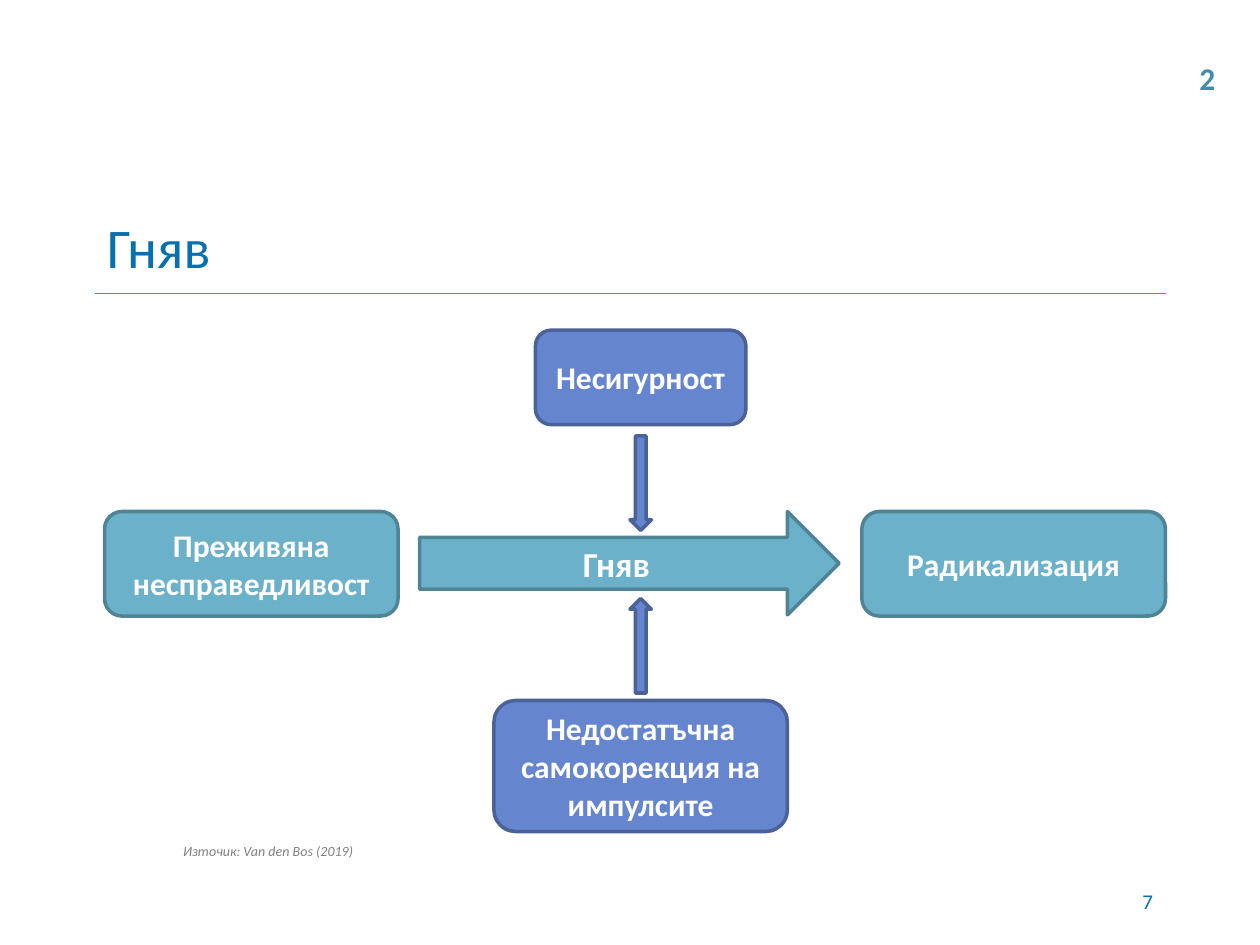
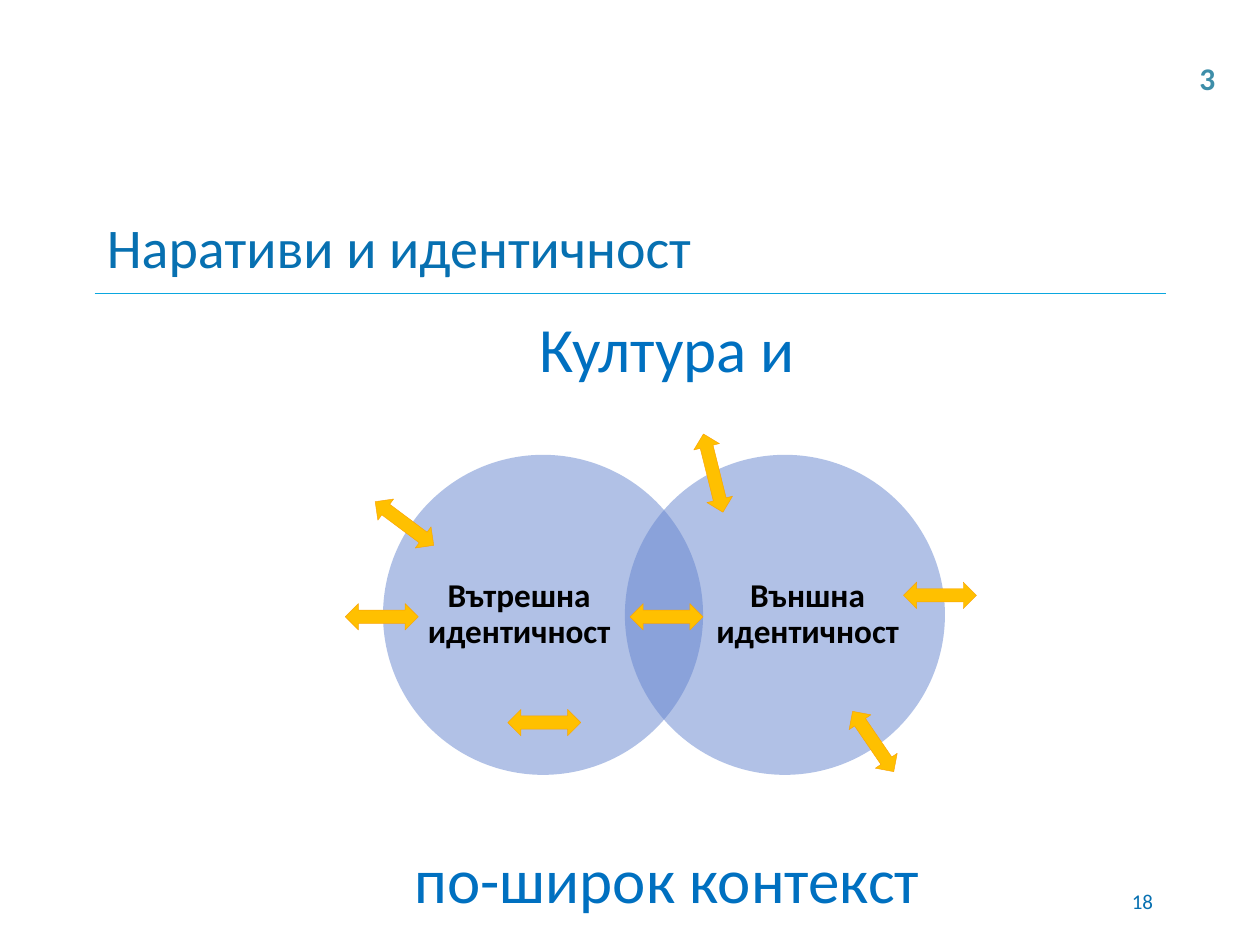
from lxml import etree
from pptx import Presentation
from pptx.dml.color import RGBColor
from pptx.enum.shapes import MSO_CONNECTOR, MSO_SHAPE
from pptx.enum.text import MSO_ANCHOR, PP_ALIGN
from pptx.oxml.ns import qn
from pptx.util import Inches, Pt

COLOURS = {
    "title": "0770B1", "rule": "0BA7DF", "corner": "3E8EA9",
    "teal": "6BB1C9", "teal_edge": "4F8395",
    "violet": "6585CF", "violet_edge": "4B6299",
    "gold": "FFC000", "gold_edge": "F9A307",
    "context": "0070C0", "source": "808080",
    "white": "FFFFFF", "black": "000000",
}
FONT = "Calibri"


def colour(name):
    return RGBColor.from_string(COLOURS[name])


def write(shape, text, size, ink, bold=False, italic=False, align=PP_ALIGN.CENTER,
          anchor=MSO_ANCHOR.MIDDLE, wrap=True, inset=None, spacing=None):
    frame = shape.text_frame
    frame.word_wrap = wrap
    frame.vertical_anchor = anchor
    if inset is not None:
        frame.margin_left = frame.margin_right = Inches(inset)
        frame.margin_top = frame.margin_bottom = Inches(inset)
    para = frame.paragraphs[0]
    para.alignment = align
    if spacing:
        para.line_spacing = spacing
    span = para.add_run()
    span.text = text
    span.font.name = FONT
    span.font.size = Pt(size)
    span.font.bold = bold
    span.font.italic = italic
    span.font.color.rgb = colour(ink)


class SlideBuilder:
    def __init__(self, deck):
        self.deck = deck
        self.page = None

    def start(self, title, corner, number):
        """Add a page with its title, rule and both numbers."""
        self.page = self.deck.slides.add_slide(self.deck.slide_layouts[6])
        self.rule(0.75, 9.25, 2.33)
        self.text((0.75, 1.58, 8.5, 0.75), title, size=32, ink="title",
                  align=PP_ALIGN.LEFT)
        self.text((9.42, 0.42, 0.33, 0.4), corner, size=18, ink="corner", bold=True,
                  align=PP_ALIGN.LEFT, anchor=MSO_ANCHOR.TOP, wrap=False)
        self.text((7.17, 6.95, 2.08, 0.4), number, size=12, ink="title",
                  align=PP_ALIGN.RIGHT)

    def rule(self, left, right, top):
        line = self.page.shapes.add_connector(
            MSO_CONNECTOR.STRAIGHT, Inches(left), Inches(top), Inches(right), Inches(top))
        line.line.color.rgb = colour("rule")
        line.line.width = Pt(0.75)
        etree.SubElement(line._element.spPr, qn("a:effectLst"))

    def text(self, place, text, **style):
        box = self.page.shapes.add_textbox(*map(Inches, place))
        write(box, text, **style)

    def shape(self, kind, place, fill, edge=None, width=2, rotation=0, opacity=None):
        shape = self.page.shapes.add_shape(kind, *map(Inches, place))
        shape.shadow.inherit = False
        shape.rotation = rotation
        shape.fill.solid()
        shape.fill.fore_color.rgb = colour(fill)
        if opacity:
            tint = shape._element.spPr.find(qn("a:solidFill"))[0]
            etree.SubElement(tint, qn("a:alpha"), val=str(opacity * 1000))
        if edge:
            shape.line.color.rgb = colour(edge)
            shape.line.width = Pt(width)
        else:
            shape.line.fill.background()
        return shape

    def labelled(self, kind, place, tone, text, size=18):
        shape = self.shape(kind, place, tone, f"{tone}_edge")
        write(shape, text, size=size, ink="white", bold=True)


def anger_slide(builder):
    builder.start("Гняв", "2", "7")
    rounded = MSO_SHAPE.ROUNDED_RECTANGLE
    builder.labelled(rounded, (0.83, 4.06, 2.33, 0.83), "teal", "Преживяна несправедливост")
    builder.labelled(rounded, (6.84, 4.06, 2.41, 0.83), "teal", "Радикализация")
    builder.labelled(MSO_SHAPE.RIGHT_ARROW, (3.33, 4.06, 3.33, 0.82), "teal", "Гняв", size=20)
    for top, rotation in ((3.75, 90), (5.04, 270)):
        builder.shape(MSO_SHAPE.RIGHT_ARROW, (4.71, top, 0.75, 0.17),
                      "violet", "violet_edge", rotation=rotation)
    builder.labelled(rounded, (3.92, 5.56, 2.33, 1.04), "violet",
                     "Недостатъчна самокорекция на импулсите")
    builder.labelled(rounded, (4.25, 2.62, 1.67, 0.75), "violet", "Несигурност")
    builder.text((0.75, 6.64, 2.76, 0.24), "Източик: Van den Bos (2019)", size=8,
                 ink="source", italic=True, anchor=MSO_ANCHOR.TOP)


def identity_slide(builder):
    builder.start("Наративи и идентичност", "3", "18")
    for top, text in ((2.41, "Култура и"), (6.62, "по-широк контекст")):
        builder.text((0.67, top, 9.25, 0.71), text, size=36, ink="context",
                     anchor=MSO_ANCHOR.TOP)

    circles = ((3.04, 3.39, "Вътрешна идентичност"), (4.96, 5.68, "Външна идентичност"))
    for circle_left, label_left, text in circles:
        builder.shape(MSO_SHAPE.OVAL, (circle_left, 3.61, 2.54, 2.54), "violet", opacity=50)
        builder.text((label_left, 3.91, 1.46, 1.94), text, size=19, ink="black",
                     bold=True, inset=0, spacing=0.9)

    exchanges = (
        (5, 4.79, 0.58, 0), (6.64, 5.78, 0.58, 55.7), (7.17, 4.62, 0.58, 0),
        (5.34, 3.65, 0.64, 76), (4.03, 5.63, 0.58, 0), (2.74, 4.79, 0.58, 0),
        (2.92, 4.05, 0.58, 36.7),
    )
    for left, top, length, rotation in exchanges:
        builder.shape(MSO_SHAPE.LEFT_RIGHT_ARROW, (left, top, length, 0.21),
                      "gold", "gold_edge", width=0.25, rotation=rotation)


def main():
    deck = Presentation()
    deck.slide_width, deck.slide_height = Inches(10), Inches(7.5)
    builder = SlideBuilder(deck)
    anger_slide(builder)
    identity_slide(builder)
    deck.save("out.pptx")


if __name__ == "__main__":
    main()
